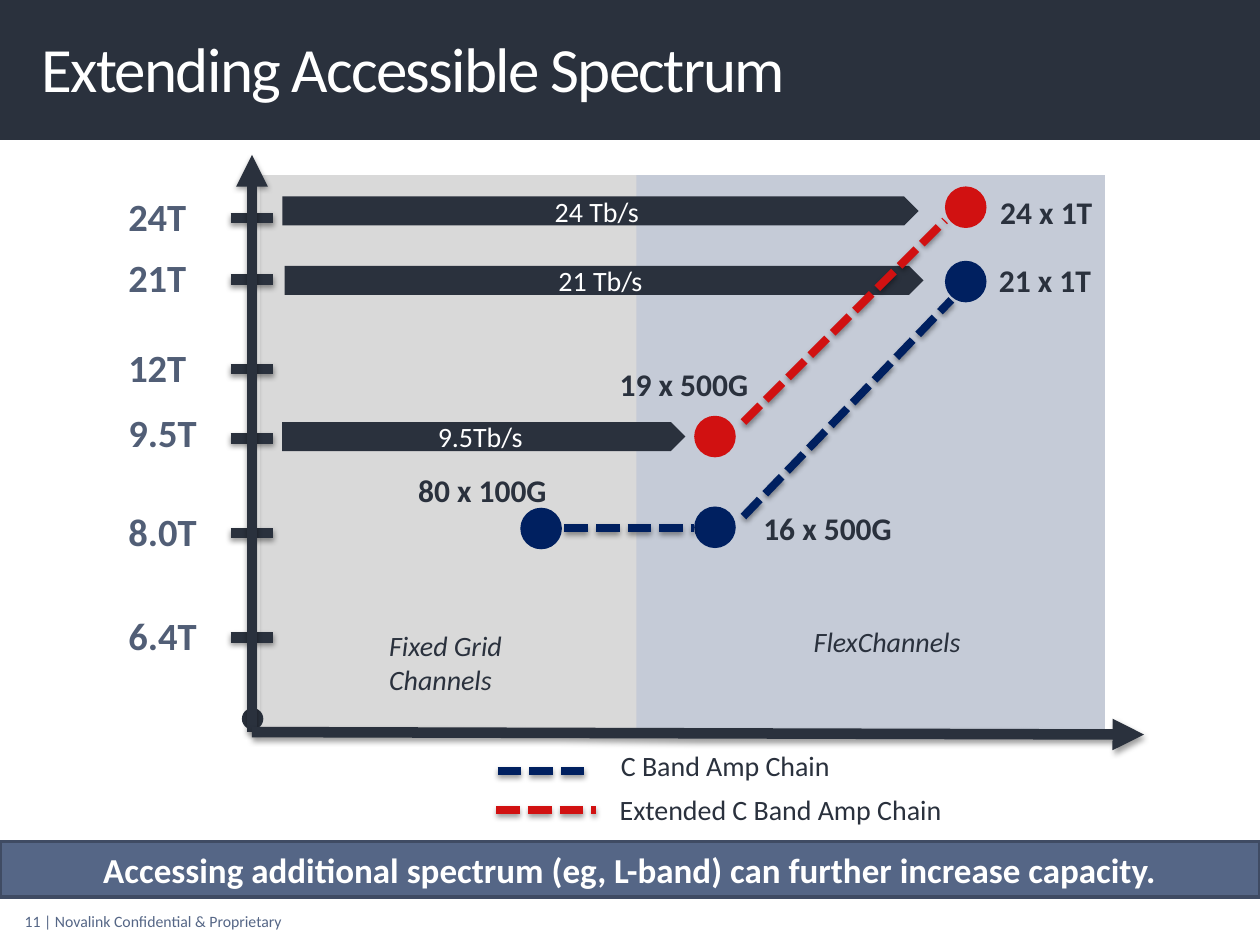
import pptx
import pptx.util
import pptx.dml.color
import pptx.enum.dml
import pptx.enum.shapes
import pptx.enum.text
import pptx.oxml
import pptx.oxml.ns
from pptx.util import Inches

Color = pptx.dml.color.RGBColor
Shape = pptx.enum.shapes.MSO_SHAPE
Align = pptx.enum.text.PP_ALIGN
Anchor = pptx.enum.text.MSO_ANCHOR

DARK = Color(0x2A, 0x31, 0x3D)
SLATE = Color(0x51, 0x5E, 0x76)
BLUE = Color(0x55, 0x66, 0x86)
EDGE = Color(0x3F, 0x4B, 0x63)
NAVY = Color(0x00, 0x20, 0x60)
RED = Color(0xD1, 0x11, 0x11)
GRAY = Color(0xD9, 0xD9, 0xD9)
PALE = Color(0xC5, 0xCB, 0xD7)
WHITE = Color(0xFF, 0xFF, 0xFF)

NS = pptx.oxml.ns.nsdecls("a")
SHADOW = (
    f'<a:effectLst {NS}><a:outerShdw blurRad="39370" dist="20320" dir="5400000" '
    'rotWithShape="0"><a:srgbClr val="000000"><a:alpha val="38000"/></a:srgbClr>'
    '</a:outerShdw></a:effectLst>'
)
ARROW = f'<a:tailEnd {NS} type="triangle"/>'


class Deck:
    font = "Calibri"

    def __init__(self):
        self.prs = pptx.Presentation()
        self.prs.slide_width, self.prs.slide_height = Inches(10), Inches(7.5)
        self.slide = self.prs.slides.add_slide(self.prs.slide_layouts[6])

    def label(self, shape, text, size, color, align=Align.LEFT, **style):
        para = shape.text_frame.paragraphs[0]
        para.alignment = align
        run = para.add_run()
        run.text = text
        run.font.color.rgb = color
        look = {"name": self.font, "size": pptx.util.Pt(size), **style}
        for key, value in look.items():
            setattr(run.font, key, value)

    def text(self, box, text, size, color, wrap=False, **style):
        shape = self.slide.shapes.add_textbox(*map(Inches, box))
        shape.text_frame.word_wrap = wrap
        self.label(shape, text, size, color, **style)
        return shape

    def block(self, kind, box, fill, edge=None):
        shape = self.slide.shapes.add_shape(kind, *map(Inches, box))
        shape.shadow.inherit = False
        shape.fill.solid()
        shape.fill.fore_color.rgb = fill
        if edge:
            shape.line.color.rgb = edge
            shape.line.width = pptx.util.Pt(2)
        else:
            shape.line.fill.background()
        return shape

    def dot(self, x, y, fill, size=0.33):
        self.block(Shape.OVAL, (x, y, size, size), fill)

    def bar(self, x, y, width, text):
        shape = self.block(Shape.PENTAGON, (x, y, width, 0.23), DARK)
        shape.text_frame.vertical_anchor = Anchor.MIDDLE
        self.label(shape, text, 16, WHITE, Align.CENTER)

    def line(self, start, end, color=DARK, width=6, dash=False, arrow=False):
        link = self.slide.shapes.add_connector(
            pptx.enum.shapes.MSO_CONNECTOR.STRAIGHT, *map(Inches, start + end))
        link.line.color.rgb = color
        link.line.width = pptx.util.Pt(width)
        if dash:
            link.line.dash_style = pptx.enum.dml.MSO_LINE.SQUARE_DOT
        props = link._element.spPr
        if arrow:
            props.find(pptx.oxml.ns.qn("a:ln")).append(pptx.oxml.parse_xml(ARROW))
        props.append(pptx.oxml.parse_xml(SHADOW))

    def dash(self, start, end, color):
        self.line(start, end, color, 4.5, dash=True)


def main():
    deck = Deck()

    # Header and footer
    deck.text((0.05, 7.19, 2.33, 0.25), "11 | Novalink Confidential & Proprietary",
              9, BLUE, align=Align.CENTER)
    deck.block(Shape.RECTANGLE, (0, 0, 10, 1.11), DARK)
    title = deck.text((0.33, 0.07, 9.33, 1.02), "Extending Accessible Spectrum",
                      36, WHITE, wrap=True)
    frame = title.text_frame
    frame.margin_left = 0
    frame.vertical_anchor = Anchor.MIDDLE
    frame.paragraphs[0].line_spacing = pptx.util.Pt(36)
    frame.paragraphs[0].runs[0].font._element.set("spc", "-100")

    # Plot zones
    deck.block(Shape.RECTANGLE, (5.01, 1.39, 3.76, 4.41), PALE)
    deck.block(Shape.RECTANGLE, (2.06, 1.39, 2.99, 4.42), GRAY)
    deck.dot(1.92, 5.62, DARK, 0.17)

    # Axes, ticks and capacity labels
    ticks = [("24T", 1.73, 1.48), ("21T", 2.22, 1.97), ("12T", 2.93, 2.68),
             ("9.5T", 3.48, 3.2), ("8.0T", 4.23, 3.98), ("6.4T", 5.06, 4.81)]
    for name, y, top in ticks:
        width = 0.75 if "." in name else 0.67
        deck.text((0.92, top, width, 0.47), name, 22, SLATE, bold=True)
        deck.line((1.83, y), (2.17, y))
    deck.line((2, 5.81), (2, 1.23), arrow=True)
    deck.line((2, 5.81), (9.08, 5.83), arrow=True)

    # Capacity bars
    deck.bar(2.24, 3.35, 3.2, "9.5Tb/s")
    deck.bar(2.24, 1.56, 5.05, "24 Tb/s")
    deck.bar(2.26, 2.11, 5.07, "21 Tb/s")

    # Data points and chains
    for x, y, color in [(5.51, 3.3, RED), (7.5, 1.48, RED), (4.13, 4.03, NAVY),
                        (5.51, 4.02, NAVY), (7.5, 2.07, NAVY)]:
        deck.dot(x, y, color)
    deck.dash((4.48, 4.19), (5.51, 4.19), NAVY)
    deck.dash((5.9, 4.1), (7.55, 2.38), NAVY)
    deck.dash((5.9, 3.35), (7.5, 1.75), RED)

    # Point labels
    for x, y, width, name in [
            (3.22, 3.69, 1.23, "80 x 100G"), (5.96, 3.99, 1.23, "16 x 500G"),
            (4.82, 2.85, 1.23, "19 x 500G"), (7.84, 1.48, 0.94, "24 x 1T"),
            (7.83, 2.02, 0.94, "21 x 1T")]:
        deck.text((x, y, width, 0.4), name, 18, DARK, bold=True)

    # Zone names
    deck.text((2.99, 4.94, 1.48, 0.64), "Fixed Grid Channels", 16, DARK,
              wrap=True, italic=True)
    deck.text((6.36, 4.91, 1.48, 0.37), "FlexChannels", 16, DARK,
              wrap=True, italic=True)

    # Legend
    deck.dash((3.95, 6.12), (4.69, 6.12), NAVY)
    deck.dash((3.94, 6.43), (4.73, 6.43), RED)
    deck.text((4.83, 5.89, 2.5, 0.37), "C Band Amp Chain", 16, DARK, wrap=True)
    deck.text((4.82, 6.24, 2.84, 0.37), "Extended C Band Amp Chain", 16, DARK,
              wrap=True)

    # Takeaway banner
    banner = deck.block(Shape.RECTANGLE, (0, 6.68, 10, 0.44), BLUE, EDGE)
    deck.label(banner, "Accessing additional spectrum (eg, L-band) can further "
               "increase capacity.", 20, WHITE, Align.CENTER, bold=True)

    deck.prs.save("out.pptx")


if __name__ == "__main__":
    main()
